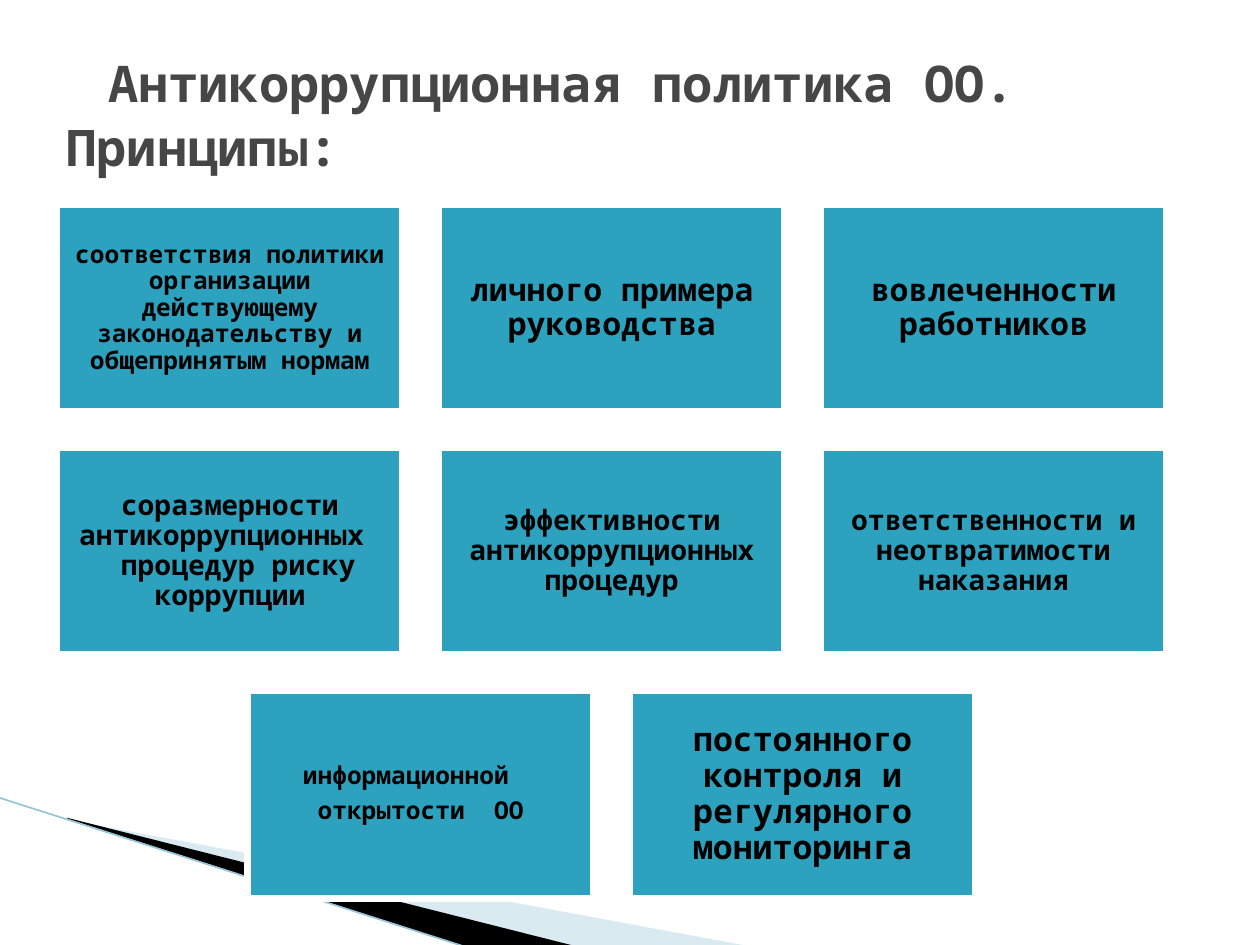
from dataclasses import dataclass
from lxml.etree import SubElement as Sub
from pptx import Presentation
from pptx.dml.color import RGBColor as Rgb
from pptx.enum.shapes import MSO_CONNECTOR as Link, MSO_SHAPE as Kind
from pptx.enum.text import MSO_ANCHOR as Anchor, PP_ALIGN as Align
from pptx.oxml.ns import qn
from pptx.util import Inches, Pt

HUES = {"tile": "2DA2BF", "white": "FFFFFF", "black": "000000",
        "title": "464646", "pale": "A0CBDC", "edge": "97C5D8"}
FONT = "Noto Sans Mono"
WIDE, HIGH = 10, 7.5
LEFT, TOP = 0.45, 1.62
STEP_X, STEP_Y = 3.03, 1.93
TILE_W, TILE_H = 2.75, 1.65


@dataclass
class Tile:
    col: float
    row: int
    size: int
    lines: tuple[str, ...]
    gap: float = 0.35


@dataclass
class Wedge:
    hue: str
    dots: tuple[tuple[float, float], ...]
    alpha: int = 100


TILES = (
    Tile(0, 0, 14, ("соответствия политики организации действующему "
                    "законодательству и общепринятым нормам",)),
    Tile(1, 0, 18, ("личного примера руководства",)),
    Tile(2, 0, 18, ("вовлеченности работников",)),
    Tile(0, 1, 16, ("соразмерности антикоррупционных ",
                    " процедур риску коррупции"), 0),
    Tile(1, 1, 16, ("эффективности антикоррупционных процедур",)),
    Tile(2, 1, 16, ("ответственности и неотвратимости наказания",)),
    Tile(0.5, 2, 14, ("информационной  ", "открытости  ОО")),
    Tile(1.5, 2, 19, ("постоянного контроля и регулярного мониторинга",)),
)
WEDGES = (
    Wedge("pale", ((0.55, 6.51), (5.95, 7.51), (4.56, 7.51), (0.55, 6.5)), 40),
    Wedge("black", ((0.53, 6.49), (4.57, 7.51), (3.72, 7.52), (0.54, 6.5))),
)


def tint(name: str) -> Rgb:
    return Rgb.from_string(HUES[name])


def add_run(para, text: str, size: float, hue: str) -> None:
    run = para.add_run()
    run.text = text
    font = run.font
    font.name, font.size, font.bold = FONT, Pt(size), True
    font.color.rgb = tint(hue)


def draw_wedge(slide, wedge: Wedge) -> None:
    dots = [(Inches(x), Inches(y)) for x, y in wedge.dots]
    pen = slide.shapes.build_freeform(*dots[0])
    pen.add_line_segments(dots[1:], close=True)
    shape = pen.convert_to_shape()
    shape.shadow.inherit = False
    shape.line.fill.background()
    shape.fill.solid()
    shape.fill.fore_color.rgb = tint(wedge.hue)
    if wedge.alpha < 100:
        hue = shape.fill._xPr.find(qn("a:solidFill"))[0]
        Sub(hue, qn("a:alpha"), val=str(wedge.alpha * 1000))


def draw_edge(slide) -> None:
    ends = [Inches(n) for n in (-0.01, 6.33, 3.71, 7.52)]
    edge = slide.shapes.add_connector(Link.STRAIGHT, *ends)
    edge.line.color.rgb = tint("edge")
    edge.line.width = Pt(0.95)
    Sub(edge._element.spPr, qn("a:effectLst"))


def draw_tile(slide, tile: Tile) -> None:
    shape = slide.shapes.add_shape(
        Kind.RECTANGLE, Inches(LEFT + tile.col * STEP_X),
        Inches(TOP + tile.row * STEP_Y), Inches(TILE_W), Inches(TILE_H))
    shape.shadow.inherit = False
    shape.fill.solid()
    shape.fill.fore_color.rgb = tint("tile")
    shape.line.color.rgb = tint("white")
    shape.line.width = Pt(4.33)
    frame = shape.text_frame
    frame.word_wrap = True
    frame.vertical_anchor = Anchor.MIDDLE
    pad = Inches(tile.size / 240)
    frame.margin_left = frame.margin_right = pad
    frame.margin_top = frame.margin_bottom = pad
    for i, line in enumerate(tile.lines):
        para = frame.add_paragraph() if i else frame.paragraphs[0]
        para.alignment = Align.CENTER
        para.line_spacing = 0.9
        if i < len(tile.lines) - 1:
            para.space_after = Pt(tile.gap * tile.size)
        add_run(para, line, tile.size, "black")


def draw_title(slide) -> None:
    box = slide.shapes.add_textbox(
        Inches(0.43), Inches(0.21), Inches(WIDE * 0.9), Inches(HIGH / 6))
    frame = box.text_frame
    frame.word_wrap = True
    frame.vertical_anchor = Anchor.MIDDLE
    para = frame.paragraphs[0]
    add_run(para, " ", 39.6, "title")
    add_run(para, "Антикоррупционная политика ОО. Принципы:", 28.8, "title")


def main() -> None:
    deck = Presentation()
    deck.slide_width, deck.slide_height = Inches(WIDE), Inches(HIGH)
    slide = deck.slides.add_slide(deck.slide_layouts[6])
    for wedge in WEDGES:
        draw_wedge(slide, wedge)
    draw_edge(slide)
    for tile in TILES:
        draw_tile(slide, tile)
    draw_title(slide)
    deck.save("out.pptx")


if __name__ == "__main__":
    main()
